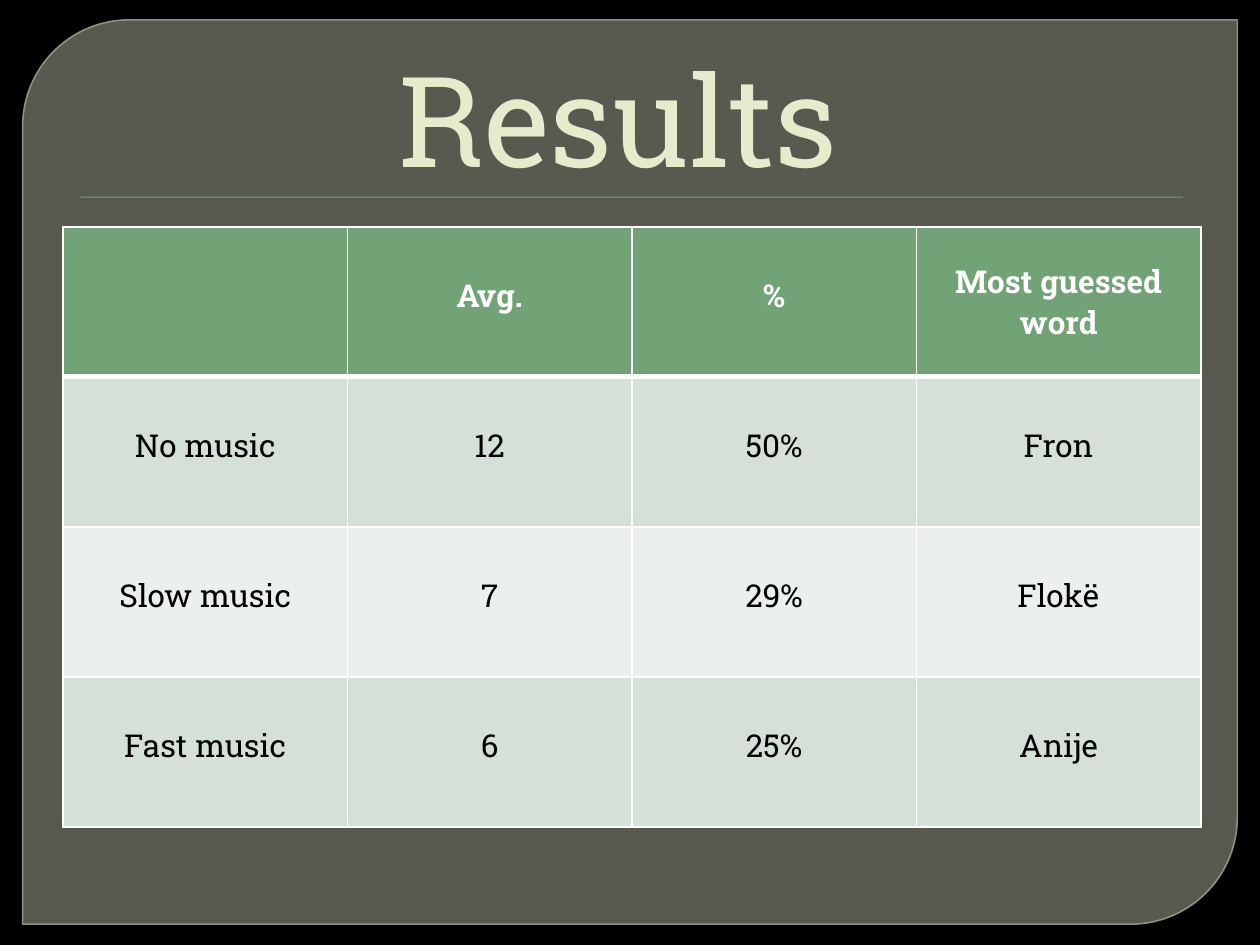
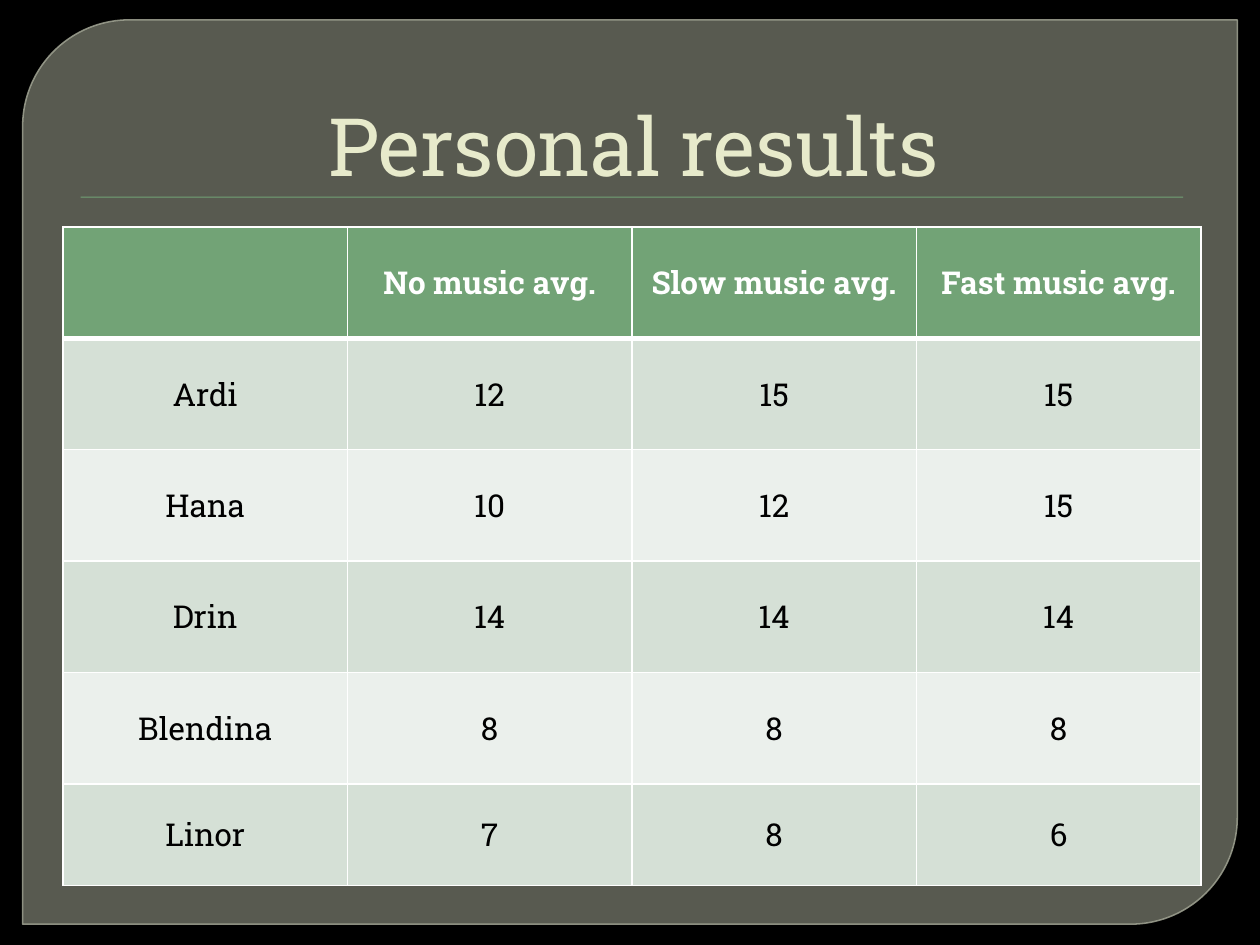
from dataclasses import dataclass

from lxml import etree
from pptx import Presentation
from pptx.dml.color import RGBColor
from pptx.enum.shapes import MSO_SHAPE
from pptx.enum.text import MSO_ANCHOR, PP_ALIGN
from pptx.oxml.ns import qn
from pptx.util import Inches, Pt

ROUNDED_DIAGONAL = MSO_SHAPE.ROUND_2_DIAG_RECTANGLE
RECTANGLE = MSO_SHAPE.RECTANGLE
TOP, MIDDLE, BOTTOM = MSO_ANCHOR.TOP, MSO_ANCHOR.MIDDLE, MSO_ANCHOR.BOTTOM
CENTER = PP_ALIGN.CENTER

BLACK = RGBColor(0x00, 0x00, 0x00)
WHITE = RGBColor(0xFF, 0xFF, 0xFF)
PANEL = RGBColor(0x88, 0x8B, 0x7B)
PANEL_EDGE = RGBColor(0x9D, 0xA0, 0x90)
GREEN = RGBColor(0x72, 0xA3, 0x76)
CREAM = RGBColor(0xE7, 0xEA, 0xCB)
BANDS = (RGBColor(0xD5, 0xE0, 0xD6), RGBColor(0xEB, 0xF0, 0xEC))

FONT = "Roboto Slab"
SLIDE_WIDTH, SLIDE_HEIGHT = Inches(10), Inches(7.5)
TABLE_TEXT_SIZE = 18
LOWERED_MARGIN = Inches(0.38)  # top margin plus one line of table text


@dataclass
class Box:
    """An area given in shares of the slide's width and height."""
    left: float
    top: float
    width: float
    height: float

    def emu(self):
        return (round(self.left * SLIDE_WIDTH), round(self.top * SLIDE_HEIGHT),
                round(self.width * SLIDE_WIDTH), round(self.height * SLIDE_HEIGHT))


PANEL_BOX = Box(0.018, 0.021, 0.964, 0.957)
RULE_BOX = Box(0.064, 0.208, 0.875, 0.0013)
TITLE_BOX = Box(0.05, 0.037, 0.9, 0.167)
RESULTS_BOX = Box(0.05, 0.24, 0.903, 0.635)
PERSONAL_BOX = Box(0.05, 0.24, 0.903, 0.697)

RESULTS = [
    ["", "Avg.", "%", "Most guessed\nword"],
    ["No music", "12", "50%", "Fron"],
    ["Slow music", "7", "29%", "Flokë"],
    ["Fast music", "6", "25%", "Anije"],
]
PERSONAL_RESULTS = [
    ["", "No music avg.", "Slow music avg.", "Fast music avg."],
    ["Ardi", "12", "15", "15"],
    ["Hana", "10", "12", "15"],
    ["Drin", "14", "14", "14"],
    ["Blendina", "8", "8", "8"],
    ["Linor", "7", "8", "6"],
]


def set_alpha(color_parent, percent):
    color = color_parent.find(".//" + qn("a:srgbClr"))
    etree.SubElement(color, qn("a:alpha")).set("val", str(percent * 1000))


def write_line(paragraph, words, size, color, bold=False):
    paragraph.alignment = CENTER
    run = paragraph.add_run()
    run.text = words
    run.font.name = FONT
    run.font.size = Pt(size)
    run.font.bold = bold
    run.font.color.rgb = color


def add_filled(slide, preset, box, color):
    shape = slide.shapes.add_shape(preset, *box.emu())
    shape.shadow.inherit = False
    shape.fill.solid()
    shape.fill.fore_color.rgb = color
    return shape


def add_backdrop(slide):
    slide.background.fill.solid()
    slide.background.fill.fore_color.rgb = BLACK

    # Translucent panel with two rounded corners
    panel = add_filled(slide, ROUNDED_DIAGONAL, PANEL_BOX, PANEL)
    panel.adjustments[0] = 0.118
    panel.adjustments[1] = 0
    panel.line.color.rgb = PANEL_EDGE
    panel.line.width = Pt(0.87)
    properties = panel.element.spPr
    set_alpha(properties.find(qn("a:solidFill")), 65)
    set_alpha(properties.find(qn("a:ln")), 88)

    # Thin rule under the title
    rule = add_filled(slide, RECTANGLE, RULE_BOX, GREEN)
    rule.line.fill.background()


def add_title(slide, box, words, size):
    frame = slide.shapes.add_textbox(*box.emu()).text_frame
    frame.word_wrap = True
    frame.vertical_anchor = BOTTOM
    frame.margin_left = Inches(0.06)
    frame.margin_right = frame.margin_top = frame.margin_bottom = 0
    write_line(frame.paragraphs[0], words, size, CREAM)


def set_borders(cell, widths):
    properties = cell._tc.get_or_add_tcPr()
    for side, width in widths.items():
        line = etree.SubElement(properties, qn("a:ln" + side), w=str(Pt(width)))
        fill = etree.SubElement(line, qn("a:solidFill"))
        etree.SubElement(fill, qn("a:srgbClr"), val=str(WHITE))


def fill_cell(cell, words, row, lowered):
    is_header = row == 0
    set_borders(cell, {"L": 1, "R": 1, "T": 3 if row == 1 else 1,
                       "B": 3 if is_header else 1})
    cell.fill.solid()
    cell.fill.fore_color.rgb = GREEN if is_header else BANDS[(row - 1) % 2]

    lines = words.split("\n")
    if lowered and len(lines) == 1:
        cell.vertical_anchor = TOP
        cell.margin_top = LOWERED_MARGIN
    else:
        cell.vertical_anchor = MIDDLE
    if not words:
        return
    frame = cell.text_frame
    for index, line in enumerate(lines):
        paragraph = frame.add_paragraph() if index else frame.paragraphs[0]
        write_line(paragraph, line, TABLE_TEXT_SIZE,
                   WHITE if is_header else BLACK, is_header)


def add_results_table(slide, box, rows, last_row_share=1.0, lowered=False):
    """Equal columns and rows; the last row may be a share of the others."""
    left, top, width, height = box.emu()
    table = slide.shapes.add_table(len(rows), len(rows[0]),
                                   left, top, width, height).table
    for column in table.columns:
        column.width = round(width / len(rows[0]))
    row_height = height / (len(rows) - 1 + last_row_share)
    for row in table.rows:
        row.height = round(row_height)
    table.rows[len(rows) - 1].height = round(row_height * last_row_share)

    for row, values in enumerate(rows):
        for column, words in enumerate(values):
            fill_cell(table.cell(row, column), words, row, lowered)


def add_results_slide(deck, title, title_size, box, rows, **table_options):
    slide = deck.slides.add_slide(deck.slide_layouts[6])
    add_backdrop(slide)
    add_title(slide, TITLE_BOX, title, title_size)
    add_results_table(slide, box, rows, **table_options)


def main():
    deck = Presentation()
    deck.slide_width, deck.slide_height = SLIDE_WIDTH, SLIDE_HEIGHT
    add_results_slide(deck, "Results ", 72, RESULTS_BOX, RESULTS, lowered=True)
    add_results_slide(deck, "Personal results", 46, PERSONAL_BOX,
                      PERSONAL_RESULTS, last_row_share=0.91)
    deck.save("out.pptx")


if __name__ == "__main__":
    main()
